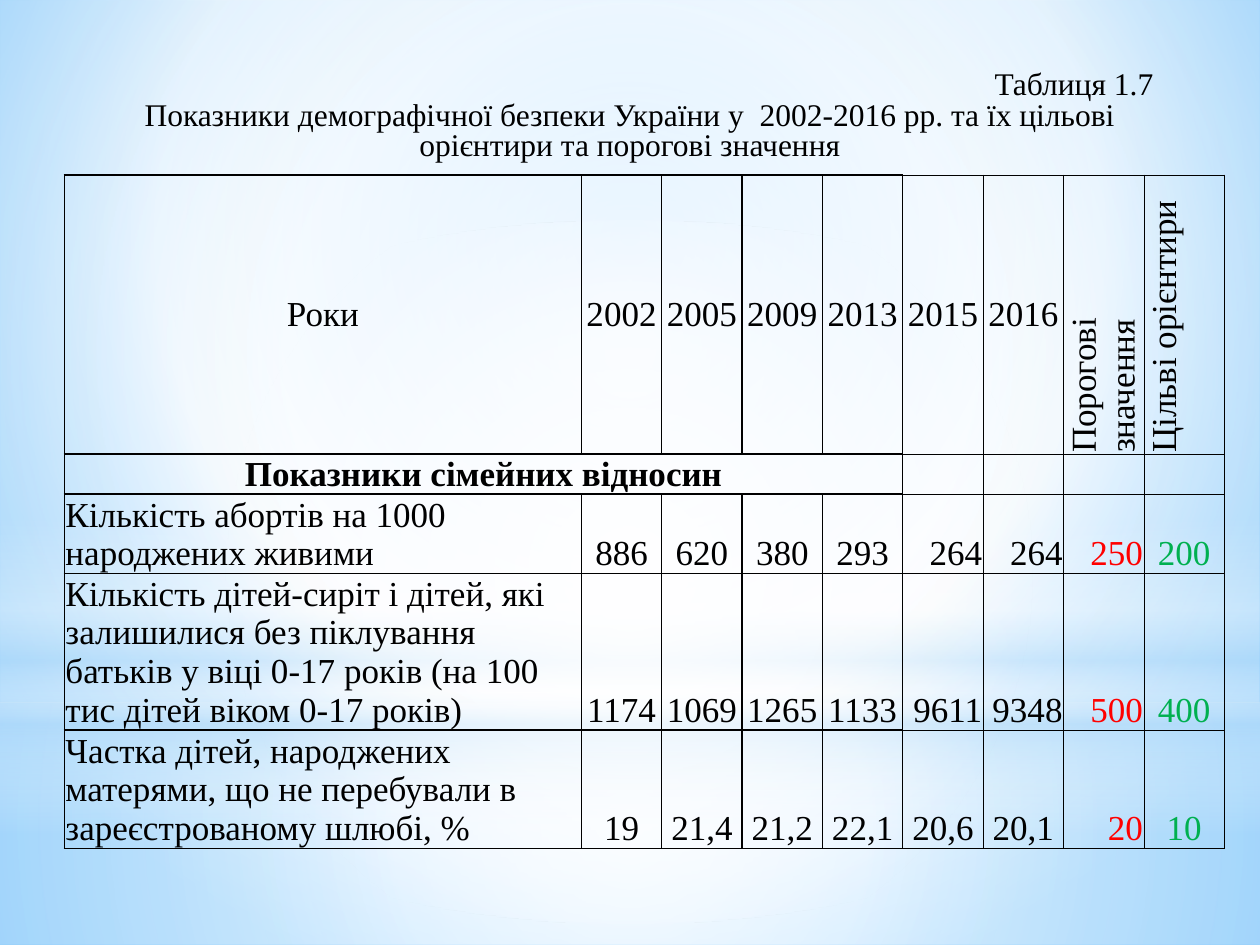
from lxml import etree
from pptx import Presentation
from pptx import util as u
from pptx.dml.color import RGBColor
from pptx.enum import shapes, text
from pptx.oxml import ns

AL = text.PP_ALIGN
AN = text.MSO_ANCHOR
BLACK, RED, GREEN = "000000", "FF0000", "00B050"
WHITE, PALE = "FFFFFF", "B4DCFA"
FONT = {"name": "Times New Roman"}
CELL = {"margin_left": u.Cm(0.02), "margin_right": u.Cm(0.02),
        "margin_top": u.Cm(0.02), "margin_bottom": 0}


def rgb(value):
    return RGBColor.from_string(value)


def assign(obj, values):
    for key, value in values.items():
        setattr(obj, key, value)


def sub(parent, tag, **attrs):
    return etree.SubElement(parent, ns.qn(tag), {k: str(v) for k, v in attrs.items()})


def gradient(root, fill, stops, focus=None):
    fill.gradient()
    grad = next(root.iter(ns.qn("a:gradFill")))
    for child in list(grad):
        grad.remove(child)
    stop_list = sub(grad, "a:gsLst")
    for pos, color, alpha in stops:
        stop = sub(stop_list, "a:gs", pos=pos * 1000)
        clr = sub(stop, "a:srgbClr", val=color)
        if alpha < 100:
            sub(clr, "a:alpha", val=alpha * 1000)
    if focus:
        rect = sub(grad, "a:path", path="circle")
        sub(rect, "a:fillToRect", **{k: v * 1000 for k, v in zip("ltrb", focus)})
    else:
        sub(grad, "a:lin", ang=90 * 60000, scaled=0)


class Deck:
    def __init__(self, width, height):
        self.prs = Presentation()
        assign(self.prs, {"slide_width": u.Cm(width), "slide_height": u.Cm(height)})
        self.s = self.prs.slides.add_slide(self.prs.slide_layouts[6])

    def background(self, stops, focus):
        gradient(self.s._element, self.s.background.fill, stops, focus)

    def glow(self, kind, top, height, stops, focus=(50, 50, 50, 50)):
        sp = self.s.shapes.add_shape(kind, 0, u.Cm(top), self.prs.slide_width, u.Cm(height))
        sp.shadow.inherit = False
        sp.line.fill.background()
        gradient(sp._element, sp.fill, stops, focus)

    def run(self, p, content, size, color=BLACK, bold=False):
        r = p.add_run()
        r.text = content
        assign(r.font, {**FONT, "size": u.Pt(size), "bold": bold})
        r.font.color.rgb = rgb(color)

    def title(self, box, lines):
        tf = self.s.shapes.add_textbox(*map(u.Cm, box)).text_frame
        assign(tf, {"word_wrap": True, "auto_size": text.MSO_AUTO_SIZE.SHAPE_TO_FIT_TEXT})
        for i, (content, align) in enumerate(lines):
            p = tf.add_paragraph() if i else tf.paragraphs[0]
            assign(p, {"alignment": align, "line_spacing": 0.8})
            self.run(p, content, 18)

    def table(self, left, top, widths, heights):
        shape = self.s.shapes.add_table(len(heights), len(widths), u.Cm(left), u.Cm(top),
                                        u.Cm(sum(widths)), u.Cm(sum(heights)))
        tbl = shape.table
        assign(tbl, {"first_row": False, "horz_banding": False})
        for col, width in zip(tbl.columns, widths):
            col.width = u.Cm(width)
        for row, height in zip(tbl.rows, heights):
            row.height = u.Cm(height)
        return tbl

    def cell(self, cell, content, align, anchor, edges, color=BLACK, bold=False, vertical=False):
        assign(cell, {**CELL, "vertical_anchor": anchor})
        cell.fill.background()
        pr = cell._tc.get_or_add_tcPr()
        if vertical:
            pr.set("vert", "vert270")
        for i, (side, width) in enumerate(zip("LRTB", edges)):
            ln = sub(pr, f"a:ln{side}", w=u.Pt(width))
            sub(sub(ln, "a:solidFill"), "a:srgbClr", val=BLACK)
            pr.insert(i, ln)
        p = cell.text_frame.paragraphs[0]
        p.alignment = align
        if content:
            self.run(p, content, 20, color, bold)


ROWS = [
    ["Роки", "2002", "2005", "2009", "2013", "2015", "2016",
     "Порогові значення", "Цільві орієнтири"],
    ["Показники сімейних відносин"] + [""] * 8,
    ["Кількість абортів на 1000 народжених живими",
     "886", "620", "380", "293", "264", "264", "250", "200"],
    ["Кількість дітей-сиріт і дітей, які залишилися без піклування батьків у віці 0-17 років "
     "(на 100 тис дітей віком 0-17 років)",
     "1174", "1069", "1265", "1133", "9611", "9348", "500", "400"],
    ["Частка дітей, народжених матерями, що не перебували в зареєстрованому шлюбі, %",
     "19", "21,4", "21,2", "22,1", "20,6", "20,1", "20", "10"],
]
HEADER, SECTION, SHARE = 0, 1, 4
LAST_THICK, THRESHOLD, TARGET = 4, 7, 8


def alignment(i, j):
    if i == HEADER:
        return AL.LEFT if j >= THRESHOLD else AL.CENTER
    if i > SECTION and j == 0:
        return AL.LEFT
    if j == THRESHOLD or (j in (5, 6) and i != SHARE):
        return AL.RIGHT
    return AL.CENTER


def main():
    deck = Deck(25.4, 19.05)
    deck.background([(0, "9ED5FF", 100), (60, WHITE, 100), (100, "5BB9FF", 100)],
                    (20, 10, 20, 60))
    rect, oval = shapes.MSO_SHAPE.RECTANGLE, shapes.MSO_SHAPE.OVAL
    deck.glow(rect, 14.17, 4.88, [(0, WHITE, 91), (37, WHITE, 76), (100, PALE, 79)])
    deck.glow(rect, 0, 14.17, [(0, WHITE, 89), (48, WHITE, 62), (100, PALE, 79)])
    deck.glow(rect, 10.46, 6.35, [(0, WHITE, 0), (29, WHITE, 30), (45, PALE, 40),
                                  (55, WHITE, 26), (65, PALE, 60), (100, WHITE, 0)], None)
    deck.glow(oval, 4.45, 14.17, [(0, WHITE, 100), (56, WHITE, 0)])

    tbl = deck.table(1.3, 3.53, [10.42] + [1.62] * 8, [5.61, 0.81, 1.6, 3.16, 2.38])
    tbl.cell(SECTION, 0).merge(tbl.cell(SECTION, LAST_THICK))
    for i, row in enumerate(ROWS):
        for j, content in enumerate(row):
            thick = 1 if j <= LAST_THICK else 0.5
            right = 1 if j < LAST_THICK and i != SECTION else 0.5
            color = {THRESHOLD: RED, TARGET: GREEN}.get(j, BLACK) if i > SECTION else BLACK
            deck.cell(tbl.cell(i, j), content, alignment(i, j),
                      AN.MIDDLE if i == HEADER else AN.BOTTOM,
                      (thick, right, thick, thick), color, i == SECTION,
                      i == HEADER and j >= THRESHOLD)

    deck.title((1.9, 1.32, 21.6, 2.1), [
        ("Таблиця 1.7", AL.RIGHT),
        ("Показники демографічної безпеки України у  2002-2016 рр. та їх цільові "
         "орієнтири та порогові значення", AL.CENTER)])
    deck.prs.save("out.pptx")


if __name__ == "__main__":
    main()
